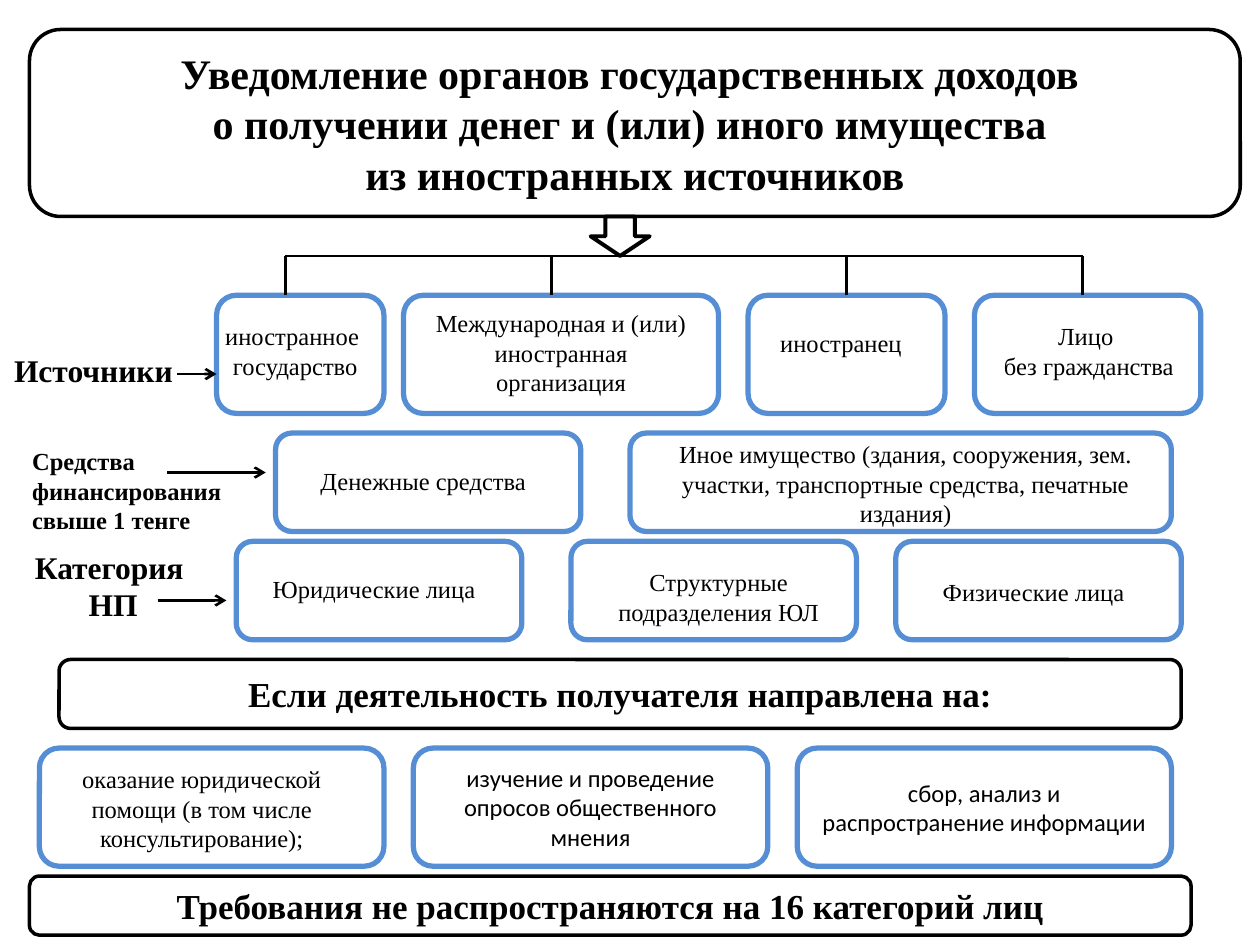
from lxml.etree import SubElement
from pptx import Presentation
from pptx.dml.color import RGBColor
from pptx.enum.shapes import MSO_CONNECTOR, MSO_SHAPE as SHAPE
from pptx.enum.text import MSO_ANCHOR, MSO_AUTO_SIZE as AUTO, PP_ALIGN as ALIGN
from pptx.oxml.ns import qn
from pptx.util import Inches, Pt

COLORS = {k: RGBColor.from_string(v) for k, v in
          {"black": "000000", "white": "FFFFFF", "blue": "558ED5"}.items()}
SERIF = "Times New Roman"

prs = Presentation()
prs.slide_width, prs.slide_height = Inches(10), Inches(7.5)
s = prs.slides.add_slide(prs.slide_layouts[6])
U = prs.slide_width / 64  # square grid: 64 columns by 48 rows


def grid(*cells):
    return [round(c * U) for c in cells]


def write(sp, text, size=14, bold=False, font=SERIF, align=ALIGN.CENTER, wrap=True):
    tf = sp.text_frame
    tf.word_wrap = wrap
    for i, line in enumerate(text.split("\n")):
        p = tf.paragraphs[0] if i == 0 else tf.add_paragraph()
        p.alignment = align
        r = p.add_run()
        r.text = line
        r.font.size, r.font.bold, r.font.name = Pt(size), bold, font
        r.font.color.rgb = COLORS["black"]


# Outlined boxes: column, row, width, height
source_row = [(11, 15, 8.5, 6), (20.5, 15, 16, 6), (38, 15, 10, 6), (49.5, 15, 11.5, 6)]
funding_row = [(14, 22, 15.5, 5), (32, 22, 27.5, 5)]
category_row = [(x, 27.5, 14.5, 5) for x in (12, 29, 45.5)]
activity_row = [(2, 38, 17.5, 6), (21, 38, 18, 6), (40.5, 38, 19, 6)]
boxes = []
for cells in source_row + funding_row + category_row + activity_row:
    sp = s.shapes.add_shape(SHAPE.ROUNDED_RECTANGLE, *grid(*cells))
    sp.shadow.inherit = False
    sp.fill.background()
    sp.line.color.rgb, sp.line.width = COLORS["blue"], Pt(3)
    boxes.append(sp)

# Activities written inside their boxes
for sp, text in zip(boxes[-2:], ("изучение и проведение опросов общественного мнения",
                                 "сбор, анализ и распространение информации")):
    sp.text_frame.vertical_anchor = MSO_ANCHOR.MIDDLE
    write(sp, text, font="Calibri")

# Title and black-framed bars
for cells, size, text in [
    ((1.5, 1.5, 61.5, 9.5), 24, "Уведомление органов государственных доходов \n"
     "о получении денег и (или) иного имущества \nиз иностранных источников"),
    ((3, 33.5, 57, 3.5), 20, "Если деятельность получателя направлена на:"),
    ((1.5, 44.5, 59, 3), 20, "Требования не распространяются на 16 категорий лиц"),
]:
    sp = s.shapes.add_shape(SHAPE.ROUNDED_RECTANGLE, *grid(*cells))
    sp.shadow.inherit = False
    sp.fill.solid()
    sp.fill.fore_color.rgb = COLORS["white"]
    sp.line.color.rgb, sp.line.width = COLORS["black"], Pt(2)
    sp.text_frame.vertical_anchor = MSO_ANCHOR.MIDDLE
    write(sp, text, size=size, bold=True)

# Block arrow under the title
sp = s.shapes.add_shape(SHAPE.DOWN_ARROW, *grid(30, 11, 3, 2))
sp.shadow.inherit = False
sp.fill.background()
sp.line.color.rgb, sp.line.width = COLORS["black"], Pt(2.25)

# Tree of sources, then arrows from the row labels: x1, y1, x2, y2
tree = [(14.5, 13, 55, 13)] + [(x, 15, x, 13) for x in (14.5, 28, 43, 55)]
arrows = [(9, 19, 11, 19), (8.5, 24, 13.5, 24), (8, 30.5, 11.5, 30.5)]
for ends in tree + arrows:
    line = s.shapes.add_connector(MSO_CONNECTOR.STRAIGHT, *grid(*ends))
    line.line.color.rgb, line.line.width = COLORS["black"], Pt(1.5)
    if ends in arrows:
        SubElement(line.line._get_or_add_ln(), qn("a:tailEnd"), type="arrow")
    SubElement(line._element.spPr, qn("a:effectLst"))
    if ends[0] == 43:
        line.begin_connect(boxes[2], 0)

# Labels: column, row, width, height
heading = dict(size=18, bold=True)
for cells, text, style in [
    ((0, 17.5, 9.5, 2.6), "Источники", heading),
    ((1, 22.35, 12, 5.2), "Средства финансирования свыше 1 тенге",
     dict(bold=True, align=ALIGN.LEFT)),
    ((1, 27.5, 9.5, 4.5), "Категория \nНП", heading),
    ((10.5, 16, 9, 3.65), "иностранное \nгосударство", {}),
    ((21.5, 15.35, 14, 5.2), "Международная и (или) иностранная организация", {}),
    ((39, 16.35, 7.5, 2.2), "иностранец", dict(align=ALIGN.LEFT, wrap=False)),
    ((50, 16, 10.3, 3.65), "Лицо\n без гражданства", dict(wrap=False)),
    ((15.5, 23.35, 12, 2.2), "Денежные средства", {}),
    ((33, 22, 26, 5.2), "Иное имущество (здания, сооружения, зем. участки, "
     "транспортные средства, печатные издания)", {}),
    ((13, 28.85, 12, 2.2), "Юридические лица", {}),
    ((30.5, 28.5, 12, 3.65), "Структурные подразделения ЮЛ", {}),
    ((46.5, 29, 12, 2.2), "Физические лица", {}),
    ((2, 38.5, 16.5, 5.2), "оказание юридической помощи (в том числе консультирование);", {}),
]:
    sp = s.shapes.add_textbox(*grid(*cells))
    sp.text_frame.auto_size = AUTO.SHAPE_TO_FIT_TEXT
    write(sp, text, **style)

prs.save("out.pptx")
